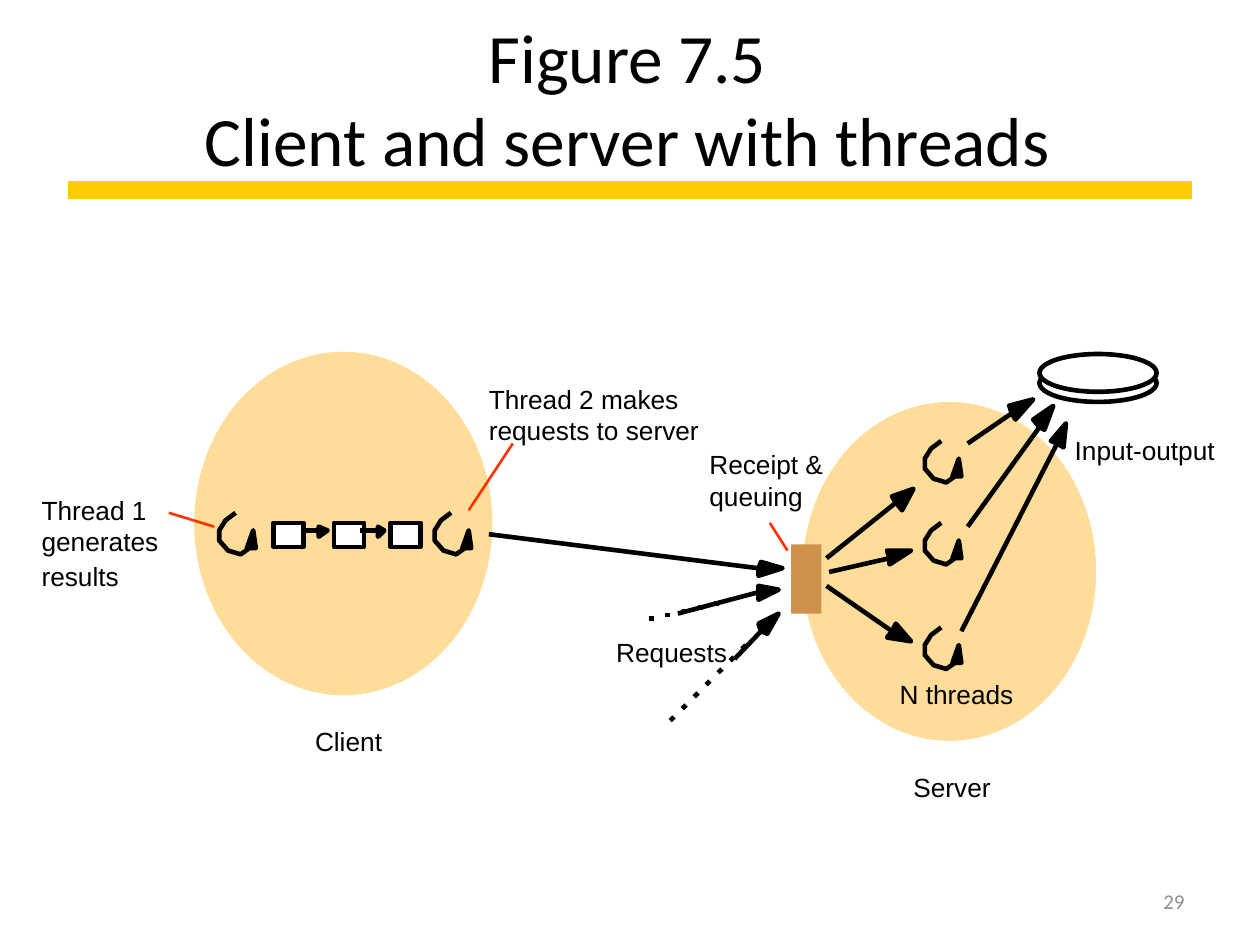
from lxml.etree import SubElement
from pptx import Presentation
from pptx.dml.color import RGBColor
from pptx.enum.shapes import MSO_CONNECTOR, MSO_SHAPE
from pptx.enum.text import MSO_ANCHOR, MSO_AUTO_SIZE, PP_ALIGN
from pptx.oxml.ns import qn
from pptx.util import Cm, Pt

CM_PER_INCH = 2.54
BLACK, WHITE, GOLD, RED = "000000", "FFFFFF", "FFCC00", "FF3300"
PEACH, BROWN, GREY = "FFDC99", "CF924C", "8C8C8C"
STROKE, POINTER_STROKE = 2.63, 1.5

LABEL_FRAME = {
    "margin_left": 0, "margin_top": 0, "margin_right": 0, "margin_bottom": 0,
    "word_wrap": False, "auto_size": MSO_AUTO_SIZE.SHAPE_TO_FIT_TEXT,
}
NUMBER_FRAME = {"word_wrap": True, "vertical_anchor": MSO_ANCHOR.MIDDLE}
TITLE_FRAME = {
    "margin_right": Cm(0.36), "word_wrap": True,
    "auto_size": MSO_AUTO_SIZE.NONE, "vertical_anchor": MSO_ANCHOR.MIDDLE,
}
LABEL_FONT = {"name": "Arial", "size": Pt(15)}
NUMBER_FONT = {"name": "Calibri", "size": Pt(12)}
TITLE_FONT = {"name": "Calibri", "size": Pt(39.6)}

LABELS = [
    ("Server", 7.25, 6.12, 0.64),
    ("N threads", 7.14, 5.38, 0.94),
    ("Input-output", 8.53, 3.45, 1.16),
    ("Client", 2.5, 5.76, 0.55),
    ("Thread 2 makes", 3.88, 3.04, 1.57),
    ("requests to server", 3.88, 3.29, 1.73),
    ("Thread 1", 0.33, 3.92, 0.87),
    ("generates", 0.33, 4.17, 1.02),
    ("results", 0.33, 4.45, 0.64),
    ("Requests", 4.89, 5.05, 0.92),
    ("Receipt &", 5.63, 3.56, 0.94),
    ("queuing", 5.63, 3.81, 0.77),
]
ARROWS = [
    ((6.56, 4.43), (7.11, 3.99), [(7.08, 3.94), (7.25, 3.88), (7.16, 4.05)]),
    ((6.58, 4.54), (7.06, 4.43), [(7.04, 4.37), (7.23, 4.37), (7.06, 4.48)]),
    ((6.56, 4.65), (7.08, 5.01), [(7.11, 4.95), (7.23, 5.09), (7.04, 5.06)]),
    ((7.68, 3.52), (8.03, 3.28), [(8.01, 3.22), (8.2, 3.17), (8.06, 3.33)]),
    ((7.68, 4.18), (8.25, 3.39), [(8.2, 3.33), (8.36, 3.22), (8.29, 3.41)]),
    ((7.63, 5.01), (8.39, 3.52), [(8.34, 3.5), (8.46, 3.36), (8.44, 3.55)]),
    ((3.88, 4.24), (6.02, 4.51), [(6.04, 4.46), (6.21, 4.51), (6.02, 4.57)]),
    ((2.41, 4.21), (2.53, 4.21), [(2.53, 4.18), (2.6, 4.21), (2.53, 4.26)]),
    ((2.86, 4.21), (3, 4.21), [(3, 4.18), (3.05, 4.21), (3, 4.26)]),
    ((5.38, 4.87), (6.02, 4.7), [(6.02, 4.65), (6.18, 4.68), (6.02, 4.76)]),
    ((5.83, 5.23), (6.04, 5.01), [(6.02, 4.95), (6.18, 4.87), (6.09, 5.03)]),
]
POINTERS = [
    ((6.11, 4.15), (6.25, 4.37)),
    ((1.34, 4.07), (1.7, 4.18)),
    ((3.72, 4.05), (4.07, 3.52)),
]
DOTTED_TRAILS = [
    (5, (5.71, 4.79), (-0.13, 0.03), (-0.04, 0)),
    (7, (5.92, 5.12), (-0.095, 0.095), (-0.03, 0.03)),
]
THREADS = [(7.34, 3.5), (7.34, 4.15), (7.34, 4.98), (3.45, 4.07), (1.74, 4.07)]
THREAD_LOOP = [(0.24, 0.28), (0.17, 0.33), (0.07, 0.3), (0, 0.22),
               (0, 0.14), (0.05, 0.06), (0.13, 0)]
THREAD_HEAD = [(0.24, 0.28), (0.22, 0.28), (0.27, 0.14), (0.29, 0.28)]


def lengths(*inches):
    return [Cm(value * CM_PER_INCH) for value in inches]


def color(hex_string):
    return RGBColor.from_string(hex_string)


def apply_format(target, values):
    for name, value in values.items():
        setattr(target, name, value)


def shift(point, offset, count=1):
    return point[0] + count * offset[0], point[1] + count * offset[1]


def paint(shape, fill=None, line=None):
    shape.shadow.inherit = False
    if fill:
        shape.fill.solid()
        shape.fill.fore_color.rgb = color(fill)
    else:
        shape.fill.background()
    if line:
        shape.line.color.rgb = color(line)
        shape.line.width = Pt(STROKE)
    else:
        shape.line.fill.background()


def write_text(shape, text, frame_format, font_format, font_color, alignment):
    frame = shape.text_frame
    apply_format(frame, frame_format)
    frame.text = text
    paragraph = frame.paragraphs[0]
    paragraph.alignment = alignment
    for run in paragraph.runs:
        apply_format(run.font, font_format)
        run.font.color.rgb = color(font_color)


def add_title(slide, text):
    title = slide.shapes.title
    left, top, width, height = lengths(0.5, 0, 9, 1.55)
    apply_format(title, {"left": left, "top": top, "width": width, "height": height})
    write_text(title, text, TITLE_FRAME, TITLE_FONT, BLACK, PP_ALIGN.CENTER)


def add_label(slide, text, left, top, width):
    box = slide.shapes.add_textbox(*lengths(left, top, width, 0.28))
    write_text(box, text, LABEL_FRAME, LABEL_FONT, BLACK, PP_ALIGN.LEFT)


def add_slide_number(slide, text):
    box = slide.shapes.add_textbox(*lengths(7.17, 6.95, 2.33, 0.4))
    write_text(box, text, NUMBER_FRAME, NUMBER_FONT, GREY, PP_ALIGN.RIGHT)


def add_preset(slide, kind, bounds, fill, line=None):
    shape = slide.shapes.add_shape(kind, *lengths(*bounds))
    paint(shape, fill, line)


def add_line(slide, start, end, line_color=BLACK, width=STROKE):
    connector = slide.shapes.add_connector(
        MSO_CONNECTOR.STRAIGHT, *lengths(*start, *end))
    connector.line.color.rgb = color(line_color)
    connector.line.width = Pt(width)
    SubElement(connector._element.spPr, qn("a:effectLst"))


def add_outline(slide, points, closed=False, fill=None):
    first, *others = [lengths(*point) for point in points]
    builder = slide.shapes.build_freeform(*first)
    builder.add_line_segments(others, close=closed)
    paint(builder.convert_to_shape(), fill, BLACK)


def add_arrow(slide, start, end, head):
    add_outline(slide, [end, *head], closed=True, fill=BLACK)
    add_line(slide, start, end)


def add_thread(slide, origin):
    add_outline(slide, [shift(origin, point) for point in THREAD_HEAD], True, BLACK)
    add_outline(slide, [shift(origin, point) for point in THREAD_LOOP])


def add_dotted_trail(slide, count, start, step, dot):
    for index in range(count):
        point = shift(start, step, index)
        add_line(slide, point, shift(point, dot))


def main():
    presentation = Presentation()
    presentation.slide_width, presentation.slide_height = lengths(10, 7.5)
    slide = presentation.slides.add_slide(presentation.slide_layouts[5])

    add_line(slide, (0.54, 1.51), (9.46, 1.51), GOLD, 10)
    add_title(slide, "Figure 7.5\vClient and server with threads")

    add_preset(slide, MSO_SHAPE.OVAL, (6.37, 3.19, 2.33, 2.69), PEACH)
    add_preset(slide, MSO_SHAPE.OVAL, (1.56, 2.81, 2.33, 2.69), PEACH, PEACH)
    for disk_top in (2.89, 2.81):
        add_preset(slide, MSO_SHAPE.OVAL, (8.25, disk_top, 0.93, 0.3), WHITE, BLACK)
    for box_left in (2.17, 2.65, 3.1):
        add_preset(slide, MSO_SHAPE.RECTANGLE, (box_left, 4.15, 0.24, 0.19), WHITE, BLACK)

    for origin in THREADS:
        add_thread(slide, origin)
    for arrow in ARROWS:
        add_arrow(slide, *arrow)
    for start, end in POINTERS:
        add_line(slide, start, end, RED, POINTER_STROKE)
    for trail in DOTTED_TRAILS:
        add_dotted_trail(slide, *trail)
    add_preset(slide, MSO_SHAPE.RECTANGLE, (6.28, 4.32, 0.24, 0.55), BROWN)

    for label in LABELS:
        add_label(slide, *label)
    add_slide_number(slide, "29")
    presentation.save("out.pptx")


if __name__ == "__main__":
    main()
